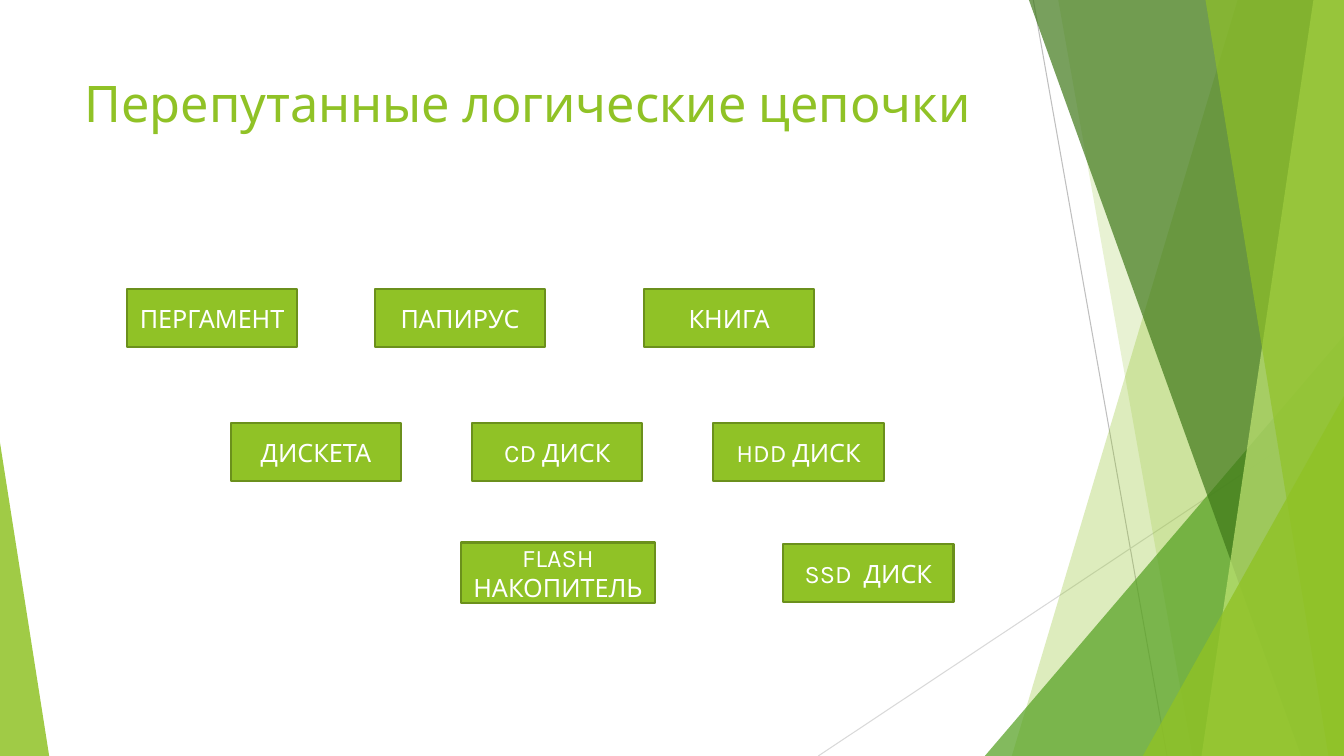
from lxml import etree
from pptx import Presentation
from pptx.dml.color import RGBColor
from pptx.enum.shapes import MSO_CONNECTOR, MSO_SHAPE
from pptx.enum.text import MSO_ANCHOR, PP_ALIGN
from pptx.oxml.ns import qn
from pptx.util import Cm, Pt

STRAIGHT = MSO_CONNECTOR.STRAIGHT
RECTANGLE = MSO_SHAPE.RECTANGLE
TRIANGLE = MSO_SHAPE.ISOSCELES_TRIANGLE
MIDDLE = MSO_ANCHOR.MIDDLE
TOP = MSO_ANCHOR.TOP
CENTER = PP_ALIGN.CENTER
LEFT = PP_ALIGN.LEFT

COLORS = {
    "lime": "90C226",
    "pale lime": "C0E474",
    "green": "54A021",
    "dark green": "3F7819",
    "border": "6B901C",
    "gray": "BFBFBF",
    "light gray": "D9D9D9",
    "white": "FFFFFF",
}
FONT = "Karla"
SLIDE_WIDTH, SLIDE_HEIGHT = 33.87, 19.05
BOX_WIDTH, BOX_HEIGHT = 4.29, 1.45


def color(name):
    return RGBColor.from_string(COLORS[name])


def fill_shape(shape, color_name, opacity=100):
    shape.shadow.inherit = False
    shape.fill.solid()
    shape.fill.fore_color.rgb = color(color_name)
    shape.line.fill.background()
    if opacity < 100:
        fill_color = shape.fill._xPr.find(qn("a:solidFill"))[0]
        etree.SubElement(fill_color, qn("a:alpha"), val=str(opacity * 1000))


def add_line(slide, start, end, color_name):
    points = [Cm(value) for value in (*start, *end)]
    line = slide.shapes.add_connector(STRAIGHT, *points)
    line.line.color.rgb = color(color_name)
    line.line.width = Pt(0.75)
    etree.SubElement(line._element.spPr, qn("a:effectLst"))


def add_facet(slide, top_x, bottom_x, color_name, opacity):
    """Fill the area between a slanted edge and the right side of the slide."""
    corners = [(top_x, 0), (SLIDE_WIDTH, 0),
               (SLIDE_WIDTH, SLIDE_HEIGHT), (bottom_x, SLIDE_HEIGHT)]
    points = [(Cm(x), Cm(y)) for x, y in corners]
    builder = slide.shapes.build_freeform(*points[0], scale=1.0)
    builder.add_line_segments(points[1:], close=True)
    fill_shape(builder.convert_to_shape(), color_name, opacity)


def add_corner(slide, left, top, width, apex, color_name, opacity):
    """Add a right triangle that stands on the bottom edge of the slide."""
    shape = slide.shapes.add_shape(
        TRIANGLE, Cm(left), Cm(top), Cm(width), Cm(SLIDE_HEIGHT - top))
    shape.adjustments[0] = apex
    fill_shape(shape, color_name, opacity)


def write_text(shape, text, size, color_name, alignment, anchor):
    frame = shape.text_frame
    frame.word_wrap = True
    frame.vertical_anchor = anchor
    paragraph = frame.paragraphs[0]
    paragraph.alignment = alignment
    run = paragraph.add_run()
    run.text = text
    run.font.name = FONT
    run.font.size = Pt(size)
    run.font.color.rgb = color(color_name)


def add_title(slide, text):
    box = slide.shapes.add_textbox(Cm(1.88), Cm(1.7), Cm(23.88), Cm(3.66))
    write_text(box, text, 36, "lime", LEFT, TOP)


def add_box(slide, text, left, top, width=BOX_WIDTH, height=BOX_HEIGHT):
    box = slide.shapes.add_shape(
        RECTANGLE, Cm(left), Cm(top), Cm(width), Cm(height))
    fill_shape(box, "lime")
    box.line.color.rgb = color("border")
    box.line.width = Pt(1.5)
    write_text(box, text, 18, "white", CENTER, MIDDLE)


def add_background(slide):
    add_line(slide, (26.04, 0), (29.41, SLIDE_HEIGHT), "gray")
    add_line(slide, (SLIDE_WIDTH, 10.24), (20.62, SLIDE_HEIGHT), "light gray")
    add_facet(slide, 31.19, 25.5, "lime", 30)
    add_facet(slide, 26.67, 30.05, "lime", 20)
    add_corner(slide, 24.82, 8.46, 9.05, 1, "green", 72)
    add_facet(slide, 25.93, 32.79, "dark green", 70)
    add_facet(slide, 33.1, 30.28, "pale lime", 70)
    add_facet(slide, 30.38, 33.48, "lime", 65)
    add_corner(slide, 28.8, 9.98, 5.07, 1, "lime", 80)
    add_corner(slide, 0, 11.15, 1.24, 0, "lime", 85)


def main():
    presentation = Presentation()
    presentation.slide_width = Cm(SLIDE_WIDTH)
    presentation.slide_height = Cm(SLIDE_HEIGHT)
    slide = presentation.slides.add_slide(presentation.slide_layouts[6])

    add_background(slide)
    add_title(slide, "Перепутанные логические цепочки")
    for text, left in (("ПЕРГАМЕНТ", 3.2), ("ПАПИРУС", 9.45), ("КНИГА", 16.23)):
        add_box(slide, text, left, 7.29)
    for column, text in enumerate(("ДИСКЕТА", "CD ДИСК", "HDD ДИСК")):
        add_box(slide, text, 5.82 + 6.08 * column, 10.67)
    add_box(slide, "FLASH НАКОПИТЕЛЬ", 11.61, 13.67, 4.9, 1.52)
    add_box(slide, "SSD  ДИСК", 19.74, 13.72)

    presentation.save("out.pptx")


if __name__ == "__main__":
    main()
